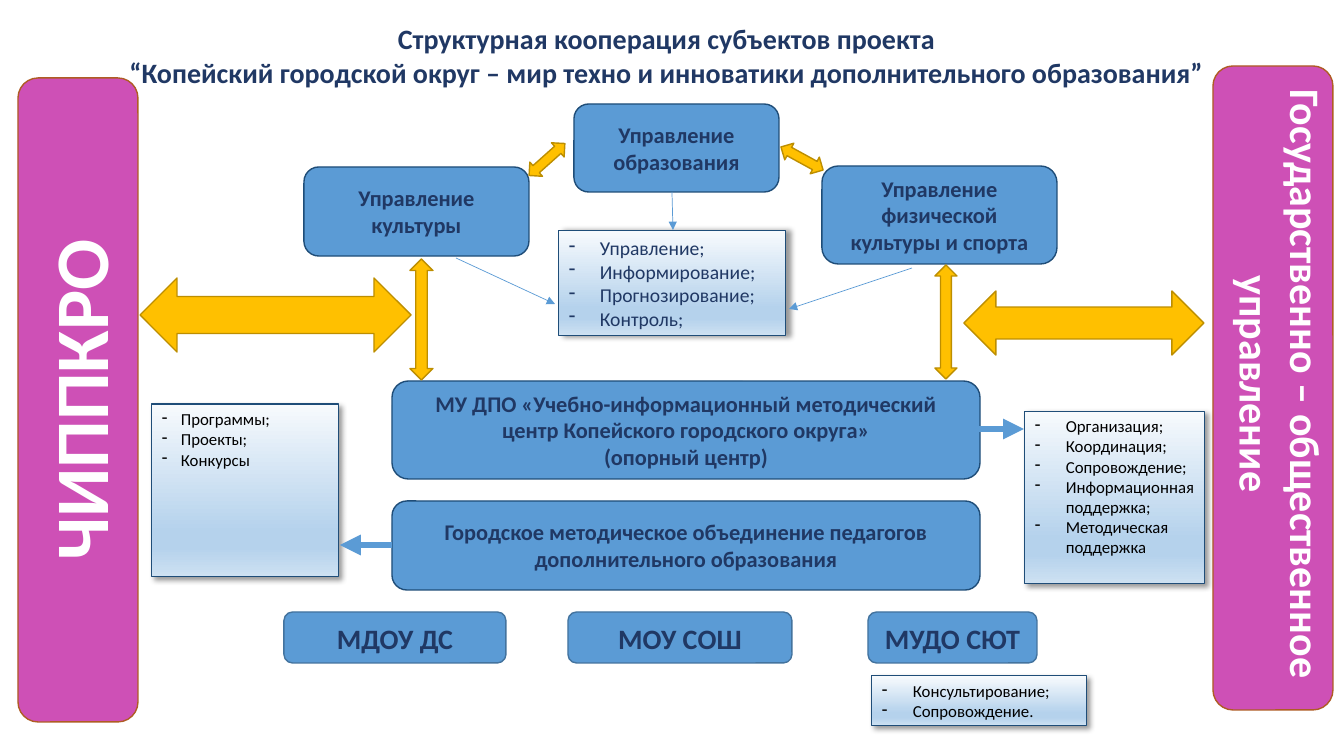
from pptx import Presentation
from pptx.dml.color import RGBColor
from pptx.enum.shapes import MSO_CONNECTOR as Link, MSO_SHAPE as Kind
from pptx.enum.text import MSO_ANCHOR as Anchor, MSO_AUTO_SIZE as Auto, PP_ALIGN as Align
from pptx.oxml import parse_xml
from pptx.oxml.ns import nsdecls
from pptx.util import Pt

PX = 914400 / 100.8
NAVY, BLUE, DARK, GOLD = "203864", "5B9BD5", "1F4D78", "FFC000"
NS = nsdecls("a")
hue = RGBColor.from_string


def put(kind, box, fill, edge, width=1, turn=0):
    shape = slide.shapes.add_shape(kind, *[round(n * PX) for n in box])
    shape.shadow.inherit = False
    shape.rotation = turn
    if fill:
        shape.fill.solid()
        shape.fill.fore_color.rgb = hue(fill)
    shape.line.color.rgb = hue(edge)
    shape.line.width = Pt(width)
    return shape


def write(shape, lines, size, color=NAVY, bold=True, dent=0):
    frame = shape.text_frame
    frame.word_wrap = True
    frame.auto_size = Auto.NONE
    for i, line in enumerate(lines):
        para = frame.add_paragraph() if i else frame.paragraphs[0]
        para.alignment = Align.LEFT if dent else Align.CENTER
        if dent:
            props = para._p.get_or_add_pPr()
            props.set("marL", str(round(dent * PX)))
            props.set("indent", str(-round(dent * PX)))
            props.append(parse_xml(f'<a:buChar {NS} char="-"/>'))
        run = para.add_run()
        run.text = line
        run.font.name = "Calibri"
        run.font.size = Pt(size)
        run.font.bold = bold
        run.font.color.rgb = hue(color)
    return frame


deck = Presentation()
deck.slide_width, deck.slide_height = round(1344 * PX), round(756 * PX)
slide = deck.slides.add_slide(deck.slide_layouts[5])

title = slide.shapes.title
title.left, title.top, title.width, title.height = [round(n * PX) for n in (0, 14, 1333, 105)]
frame = write(title, [
    "Структурная кооперация субъектов проекта",
    "“Копейский городской округ – мир техно и инноватики дополнительного образования”",
], 20)
frame.vertical_anchor = Anchor.MIDDLE
frame.margin_bottom = round(28 * PX)
SHADE = (f'<a:outerShdw {NS} blurRad="50800" dist="38100" dir="%d" algn="tl" rotWithShape="0">'
         '<a:srgbClr val="000000"><a:alpha val="40000"/></a:srgbClr></a:outerShdw>')
for para in frame.paragraphs:
    para.line_spacing = 1.0
    glow = parse_xml(f"<a:effectLst {NS}>{SHADE % 2700000}</a:effectLst>")
    para.runs[0].font._element.insert(1, glow)

for name, left, width in [("МДОУ ДС", 284, 222), ("МОУ СОШ", 568, 224), ("МУДО СЮТ", 868, 169)]:
    school = put(Kind.ROUNDED_RECTANGLE, (left, 612, width, 51), BLUE, "43739E")
    frame = write(school, [name], 20)
    frame.paragraphs[0].line_spacing = 1.07
    frame.paragraphs[0].space_after = Pt(8)

for name, left, top, box, turn, size in [
    ("ЧИППКРО", 18, 78, (-131, 349, 419, 102), 270, 54),
    ("Государственно – общественное управление", 1213, 66, (964, 328, 634, 112), 90, 30),
]:
    put(Kind.ROUNDED_RECTANGLE, (left, top, 120, 644), "CE50B6", "AF5C24")
    label = slide.shapes.add_textbox(*[round(n * PX) for n in box])
    label.rotation = turn
    write(label, [name], size, "FFFFFF")

for box, lines in [
    ((392, 381, 588, 98), ["МУ ДПО «Учебно-информационный методический центр Копейского городского округа»",
                           "(опорный центр)"]),
    ((304, 167, 225, 89), ["Управление культуры"]),
    ((574, 104, 205, 88), ["Управление образования"]),
    ((822, 166, 235, 98), ["Управление физической культуры и спорта"]),
    ((392, 501, 588, 89), ["Городское методическое объединение педагогов дополнительного образования"]),
]:
    write(put(Kind.ROUNDED_RECTANGLE, box, BLUE, DARK), lines, 16)

for box, turn in [
    ((140, 278, 271, 74), 0), ((964, 291, 240, 64), 0),
    ((523, 150, 48, 19), 318.2), ((778, 149, 48, 19), 208.7),
    ((361, 308, 121, 23), 270), ((889, 311, 114, 22), 270),
]:
    put(Kind.LEFT_RIGHT_ARROW, box, GOLD, "BD8E00", 1, turn)

STOPS = "".join(f'<a:gs pos="{at}000"><a:srgbClr val="{tint}"/></a:gs>' for at, tint in [
    (0, "F7FAFD"), (74, "B5D2EC"), (83, "B5D2EC"), (100, "CEE1F2")])
for box, size, color, dent, turn, lines in [
    ((559, 231, 227, 105), 14, NAVY, 31, 0,
     ["Управление;", "Информирование;", "Прогнозирование;", "Контроль;"]),
    ((152, 404, 187, 173), 12, "000000", 19, 45, ["Программы;", "Проекты;", "Конкурсы"]),
    ((1025, 411, 180, 173), 12, "000000", 31, 45,
     ["Организация;", "Координация;", "Сопровождение;", "Информационная поддержка;",
      "Методическая поддержка"]),
    ((872, 676, 215, 50), 12, "000000", 31, 45, ["Консультирование;", "Сопровождение."]),
]:
    card = put(Kind.RECTANGLE, box, None, DARK, 0.75)
    props = card._element.spPr
    props.insert(2, parse_xml(f'<a:gradFill {NS}><a:gsLst>{STOPS}</a:gsLst>'
                              '<a:lin ang="5400000" scaled="0"/></a:gradFill>'))
    props[-1].append(parse_xml(SHADE % (turn * 60000)))
    frame = write(card, lines, size, color, False, dent)
    frame.vertical_anchor = Anchor.TOP
    frame.margin_right = round(4 * PX)

for ends, width in [
    ((672, 192, 673, 230), 0.5), ((456, 258, 555, 304), 0.5), ((912, 268, 789, 309), 0.5),
    ((392, 545, 340, 545), 5), ((967, 429, 1024, 429), 5),
]:
    link = slide.shapes.add_connector(Link.STRAIGHT, *[round(n * PX) for n in ends])
    link.line.color.rgb = hue(BLUE)
    link.line.width = Pt(width)
    link.line._get_or_add_ln().append(parse_xml(f'<a:tailEnd {NS} type="triangle"/>'))
    link._element.spPr.append(parse_xml(f"<a:effectLst {NS}/>"))

deck.save("out.pptx")
